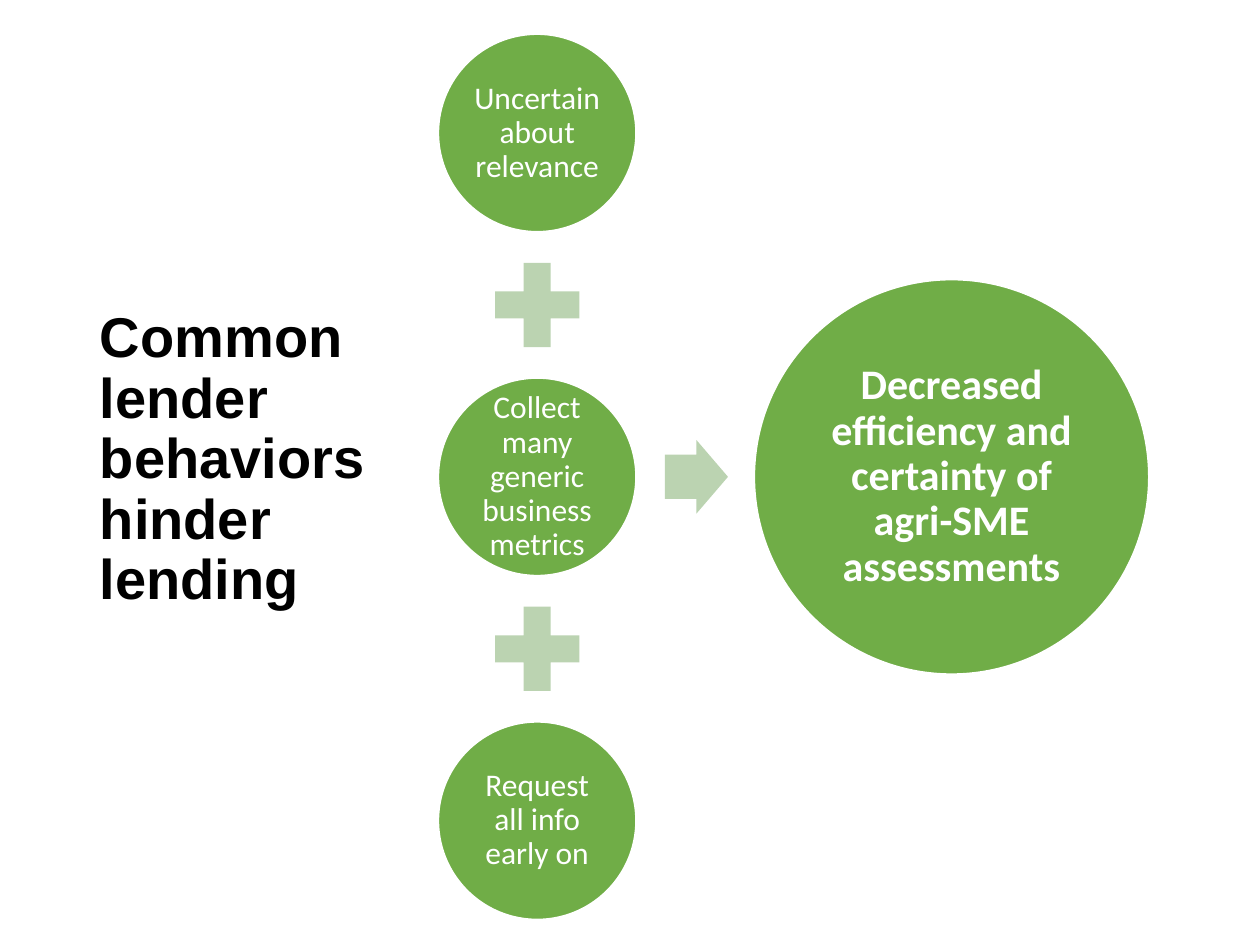
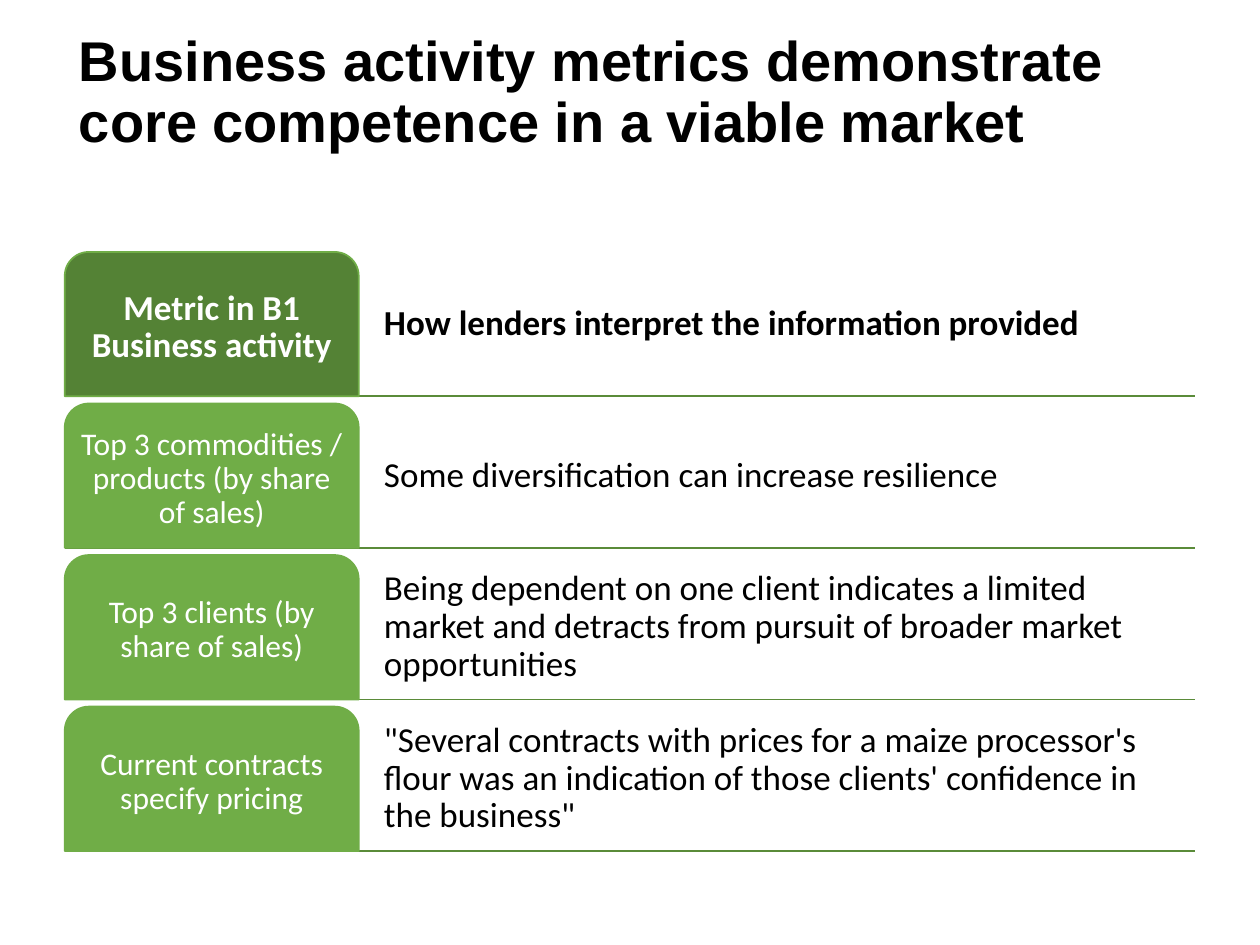
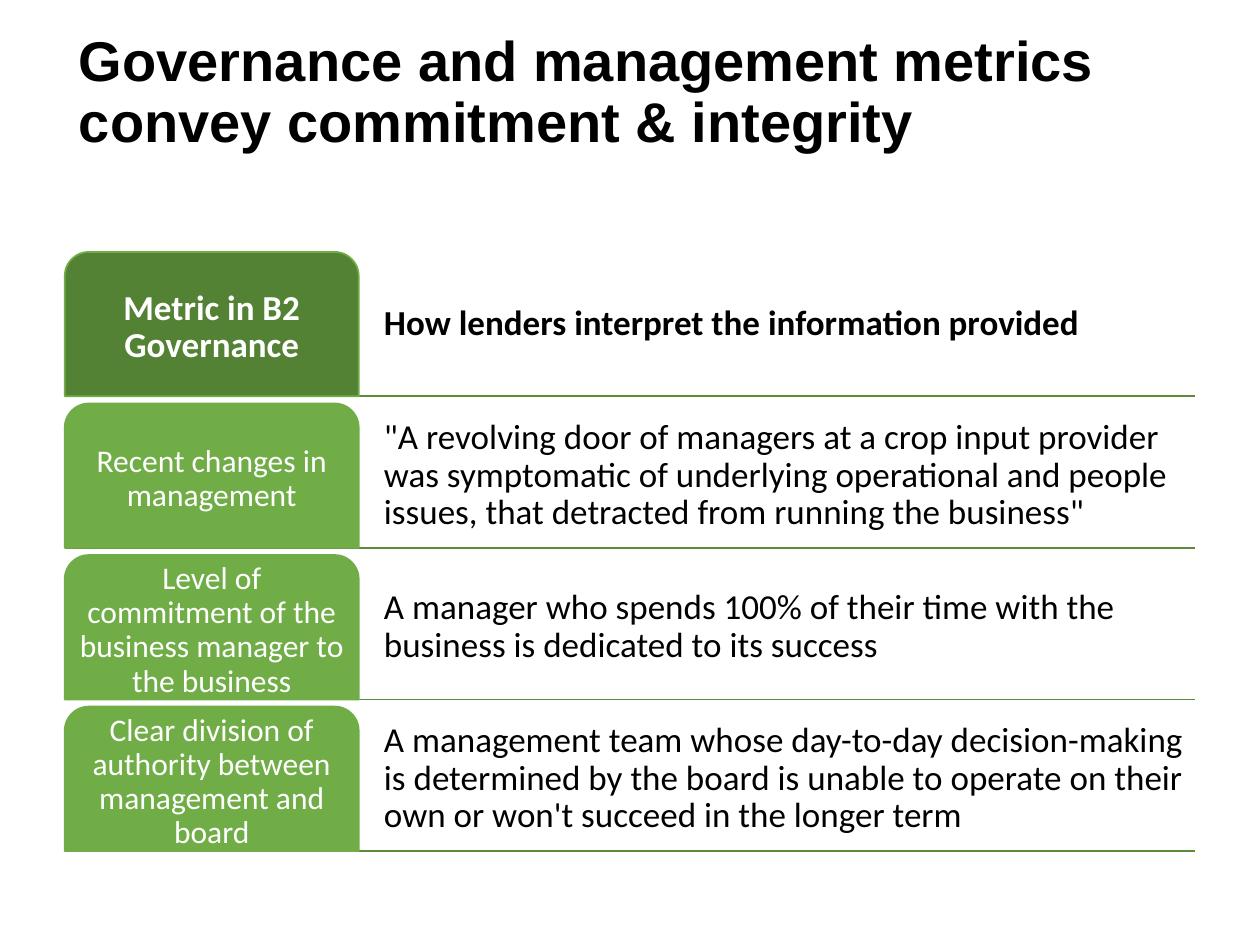
import pptx
import pptx.util
import pptx.dml.color
import pptx.enum.shapes
import pptx.enum.text
import pptx.oxml.ns
import lxml.etree

Pt = pptx.util.Pt
RGBColor = pptx.dml.color.RGBColor
KIND = pptx.enum.shapes.MSO_SHAPE
ALIGN = pptx.enum.text.PP_ALIGN

BLACK = RGBColor(0x00, 0x00, 0x00)
WHITE = RGBColor(0xFF, 0xFF, 0xFF)
GREEN = RGBColor(0x70, 0xAD, 0x47)
DARK = RGBColor(0x54, 0x82, 0x35)
PALE = RGBColor(0xBB, 0xD3, 0xB1)
RULE = RGBColor(0x5A, 0x8B, 0x39)


def write(shape, text, size=18, font="Calibri", color=WHITE, bold=False,
          align=ALIGN.CENTER, pad=(3, 3, 3, 3)):
    frame = shape.text_frame
    frame.word_wrap = True
    frame.vertical_anchor = pptx.enum.text.MSO_ANCHOR.MIDDLE
    frame.margin_left, frame.margin_top, frame.margin_right, frame.margin_bottom = map(Pt, pad)
    para = frame.paragraphs[0]
    para.alignment = align
    para.line_spacing = 0.9
    run = para.add_run()
    run.text = text
    run.font.size = Pt(size)
    run.font.name = font
    run.font.bold = bold
    run.font.color.rgb = color


def draw(slide, kind, box, fill, edge=None):
    shape = slide.shapes.add_shape(kind, *map(Pt, box))
    shape.shadow.inherit = False
    shape.fill.solid()
    shape.fill.fore_color.rgb = fill
    if edge is None:
        shape.line.fill.background()
    else:
        shape.line.color.rgb = edge
        shape.line.width = Pt(1)
    return shape


deck = pptx.Presentation()
deck.slide_width = Pt(720)
deck.slide_height = Pt(540)
blank = deck.slide_layouts[6]

HEAD = dict(size=32, font="Arial", color=BLACK, bold=True,
            align=ALIGN.LEFT, pad=(7.2, 3.6, 7.2, 3.6))

slide = deck.slides.add_slide(blank)
title = slide.shapes.add_textbox(Pt(50), Pt(44), Pt(187), Pt(438.5))
write(title, "Common lender behaviors hinder lending", **HEAD)

habits = [
    "Uncertain about relevance",
    "Collect many generic business metrics",
    "Request all info early on",
]
mid, first, step = 307, 76, 196.5
disc, plus, big = 113, 65.5, 225.5
for i, habit in enumerate(habits):
    y = first + i * step
    if i:
        draw(slide, KIND.MATH_PLUS,
             (mid - plus / 2, y - step / 2 - plus / 2, plus, plus), PALE)
    ball = draw(slide, KIND.OVAL,
                (mid - disc / 2, y - disc / 2, disc, disc), GREEN, WHITE)
    write(ball, habit, pad=(2, 2, 2, 2))

axis = first + step
arrow = draw(slide, KIND.RIGHT_ARROW, (380, axis - 21, 36, 42), PALE)
arrow.adjustments[0] = 0.6
result = draw(slide, KIND.OVAL, (431, axis - big / 2, big, big), GREEN, WHITE)
write(result, "Decreased efficiency and certainty of agri-SME assessments",
      size=24, bold=True, pad=(2, 2, 2, 2))

left, right, top = 37, 683, 144
high, pitch, wide = 82.5, 86.6, 168
tables = [
    ("Business activity metrics demonstrate core competence in a viable market", [
        ("Metric in B1 Business activity",
         "How lenders interpret the information provided"),
        ("Top 3 commodities / products (by share of sales)",
         "Some diversification can increase resilience"),
        ("Top 3 clients (by share of sales)",
         "Being dependent on one client indicates a limited market and "
         "detracts from pursuit of broader market opportunities"),
        ("Current contracts specify pricing",
         "\"Several contracts with prices for a maize processor's flour was an "
         "indication of those clients' confidence in the business\""),
    ]),
    ("Governance and management metrics convey commitment & integrity", [
        ("Metric in B2 Governance",
         "How lenders interpret the information provided"),
        ("Recent changes in management",
         "\"A revolving door of managers at a crop input provider was "
         "symptomatic of underlying operational and people issues, that "
         "detracted from running the business\""),
        ("Level of commitment of the business manager to the business",
         "A manager who spends 100% of their time with the business is "
         "dedicated to its success"),
        ("Clear division of authority between management and board",
         "A management team whose day-to-day decision-making is determined by "
         "the board is unable to operate on their own or won't succeed in the "
         "longer term"),
    ]),
]

for name, rows in tables:
    slide = deck.slides.add_slide(blank)
    title = slide.shapes.add_textbox(Pt(38), Pt(1.5), Pt(645), Pt(104.5))
    write(title, name, **HEAD)
    for i, (metric, view) in enumerate(rows):
        y = top + i * pitch
        lead = i == 0
        base = y + high
        rule = slide.shapes.add_connector(
            pptx.enum.shapes.MSO_CONNECTOR.STRAIGHT,
            Pt(left), Pt(base), Pt(right), Pt(base))
        rule.line.color.rgb = RULE
        rule.line.width = Pt(1)
        lxml.etree.SubElement(rule._element.spPr, pptx.oxml.ns.qn("a:effectLst"))

        note = slide.shapes.add_textbox(
            Pt(left + wide), Pt(y), Pt(right - left - wide), Pt(high))
        write(note, view, size=20, color=BLACK, bold=lead,
              align=ALIGN.LEFT, pad=(14.4, 3, 3, 3))

        tab = draw(slide, KIND.ROUND_2_SAME_RECTANGLE, (left, y, wide, high),
                   DARK if lead else GREEN, GREEN)
        write(tab, metric, size=20 if lead else 18, bold=lead)

deck.save("out.pptx")
